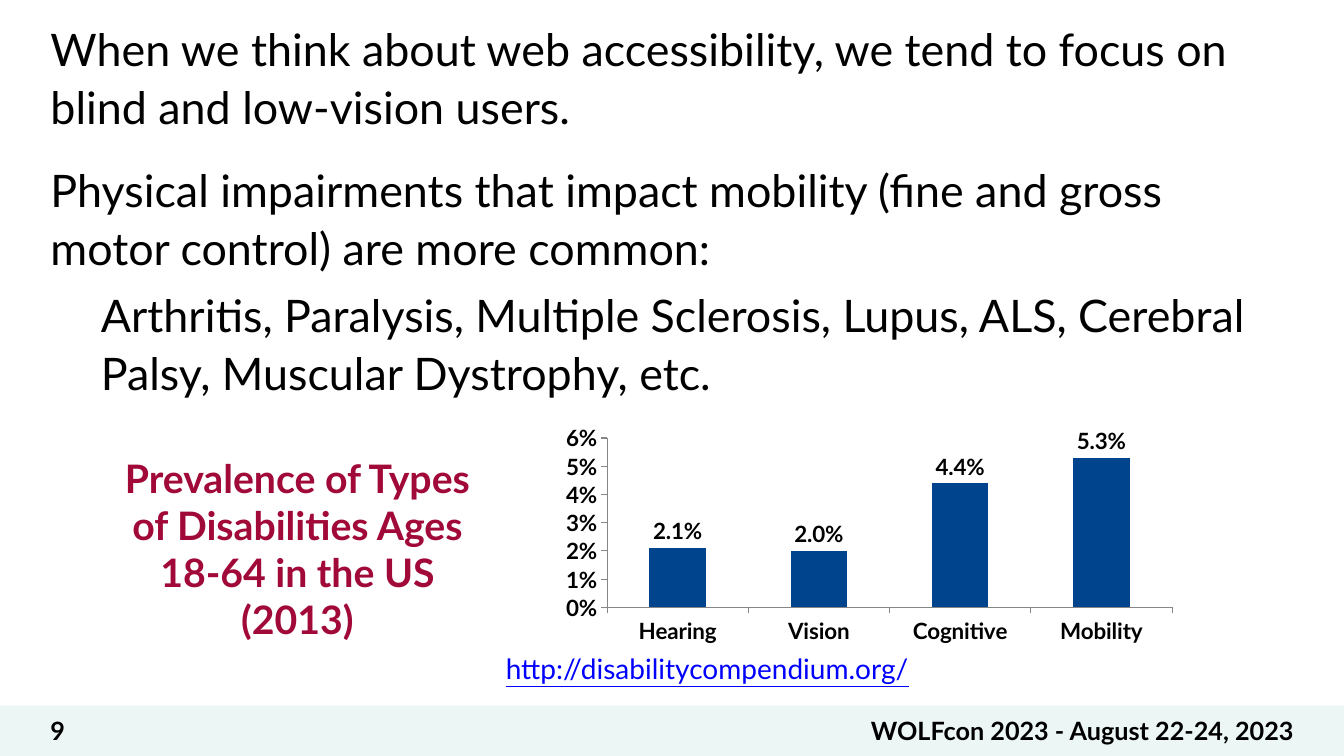
from dataclasses import dataclass

from pptx import Presentation
from pptx.chart.data import CategoryChartData as ChartData
from pptx.dml.color import RGBColor as Color
from pptx.enum.chart import XL_CHART_TYPE as Kind
from pptx.enum.chart import XL_LABEL_POSITION as Spot
from pptx.enum.chart import XL_TICK_MARK as Tick
from pptx.enum.shapes import MSO_SHAPE as Shape
from pptx.enum.text import MSO_ANCHOR as Anchor
from pptx.enum.text import PP_ALIGN as Align
from pptx.slide import Slide
from pptx.util import Inches, Pt

FONT = "Lato"
BLACK = "000000"
GRAY = "868686"


@dataclass
class Line:
    text: str
    before: float = 0
    indent: float = 0


@dataclass
class Box:
    at: tuple[float, float, float, float]
    lines: list[Line]
    size: float
    color: str = BLACK
    bold: bool = False
    under: bool = False
    align: Align = Align.LEFT
    anchor: Anchor = Anchor.TOP
    inset: tuple[float, float, float, float] = (0.1, 0.05, 0.1, 0.05)
    space: float = 1
    wrap: bool = True


BOXES = [
    Box((0, -0.03, 13.15, 6.88), [
        Line("When we think about web accessibility, we tend to focus on "
             "blind and low-vision users."),
        Line("Physical impairments that impact mobility (fine and gross "
             "motor control) are more common:", 18),
        Line("Arthritis, Paralysis, Multiple Sclerosis, Lupus, ALS, "
             "Cerebral Palsy, Muscular Dystrophy, etc.", 6, 0.5),
    ], 32, inset=(0.5, 0.2, 0.5, 0.05), space=1.08),
    Box((0.5, 7, 0.5, 0.5), [Line("9")], 18, bold=True,
        anchor=Anchor.MIDDLE, inset=(0, 0.05, 0.1, 0.05)),
    Box((1.12, 7, 11.71, 0.5), [Line("WOLFcon 2023 - August 22-24, 2023")],
        18, bold=True, align=Align.RIGHT, anchor=Anchor.MIDDLE,
        inset=(0, 0.05, 0, 0.05)),
    Box((1, 4.46, 3.9, 1.51),
        [Line("Prevalence of Types of Disabilities Ages 18-64 in the US "
              "(2013)")],
        28, "A10939", bold=True, align=Align.CENTER),
    Box((4.9, 6.41, 4.23, 0.44), [Line("http://disabilitycompendium.org/")],
        20, "0000FF", under=True, align=Align.CENTER, wrap=False),
]

RATES = {"Hearing": 0.021, "Vision": 0.02, "Cognitive": 0.044,
         "Mobility": 0.053}


def paint(target, code: str) -> None:
    target.solid()
    target.fore_color.rgb = Color.from_string(code)


def draw_band(slide: Slide) -> None:
    band = slide.shapes.add_shape(
        Shape.RECTANGLE, *map(Inches, (0, 7, 13.33, 0.5)))
    band.shadow.inherit = False
    paint(band.fill, "ECF6F5")
    band.line.fill.background()


def draw_box(slide: Slide, box: Box) -> None:
    frame = slide.shapes.add_textbox(*map(Inches, box.at)).text_frame
    frame.word_wrap = box.wrap
    frame.vertical_anchor = box.anchor
    (frame.margin_left, frame.margin_top,
     frame.margin_right, frame.margin_bottom) = map(Inches, box.inset)
    frame.text = "\n".join(line.text for line in box.lines)
    for line, para in zip(box.lines, frame.paragraphs):
        para.alignment = box.align
        para.line_spacing = box.space
        para.space_before = Pt(line.before)
        if line.indent:
            para._p.get_or_add_pPr().set("marL", str(Inches(line.indent)))
        for run in para.runs:
            font = run.font
            font.name = FONT
            font.size = Pt(box.size)
            font.bold = box.bold
            font.underline = box.under
            paint(font.fill, box.color)


def draw_chart(slide: Slide) -> None:
    data = ChartData(number_format="0.0%")
    data.categories = list(RATES)
    data.add_series("Series 1", list(RATES.values()))
    chart = slide.shapes.add_chart(
        Kind.COLUMN_CLUSTERED, *map(Inches, (5.49, 4.17, 6.26, 2.26)),
        data).chart
    chart.has_legend = False
    chart.has_title = False
    chart.font.name = FONT
    chart.font.size = Pt(16)
    chart.font.bold = True
    paint(chart.font.fill, BLACK)

    for axis in (chart.category_axis, chart.value_axis):
        axis.has_major_gridlines = False
        axis.major_tick_mark = Tick.OUTSIDE
        axis.minor_tick_mark = Tick.NONE
        paint(axis.format.line.fill, GRAY)
        axis.format.line.width = Pt(0.75)
    scale = chart.value_axis
    scale.minimum_scale = 0
    scale.maximum_scale = 0.06
    scale.major_unit = 0.01
    scale.tick_labels.number_format = "0%"
    scale.tick_labels.number_format_is_linked = False

    plot = chart.plots[0]
    plot.gap_width = 150
    plot.vary_by_categories = False
    paint(plot.series[0].format.fill, "00448D")
    plot.has_data_labels = True
    labels = plot.data_labels
    labels.show_value = True
    labels.number_format = "0.0%"
    labels.number_format_is_linked = False
    labels.position = Spot.OUTSIDE_END


def main() -> None:
    deck = Presentation()
    deck.slide_width = Inches(13.33)
    deck.slide_height = Inches(7.5)
    slide = deck.slides.add_slide(deck.slide_layouts[6])
    paint(slide.background.fill, "FFFFFF")
    draw_band(slide)
    for box in BOXES:
        draw_box(slide, box)
    draw_chart(slide)
    deck.save("out.pptx")


if __name__ == "__main__":
    main()
